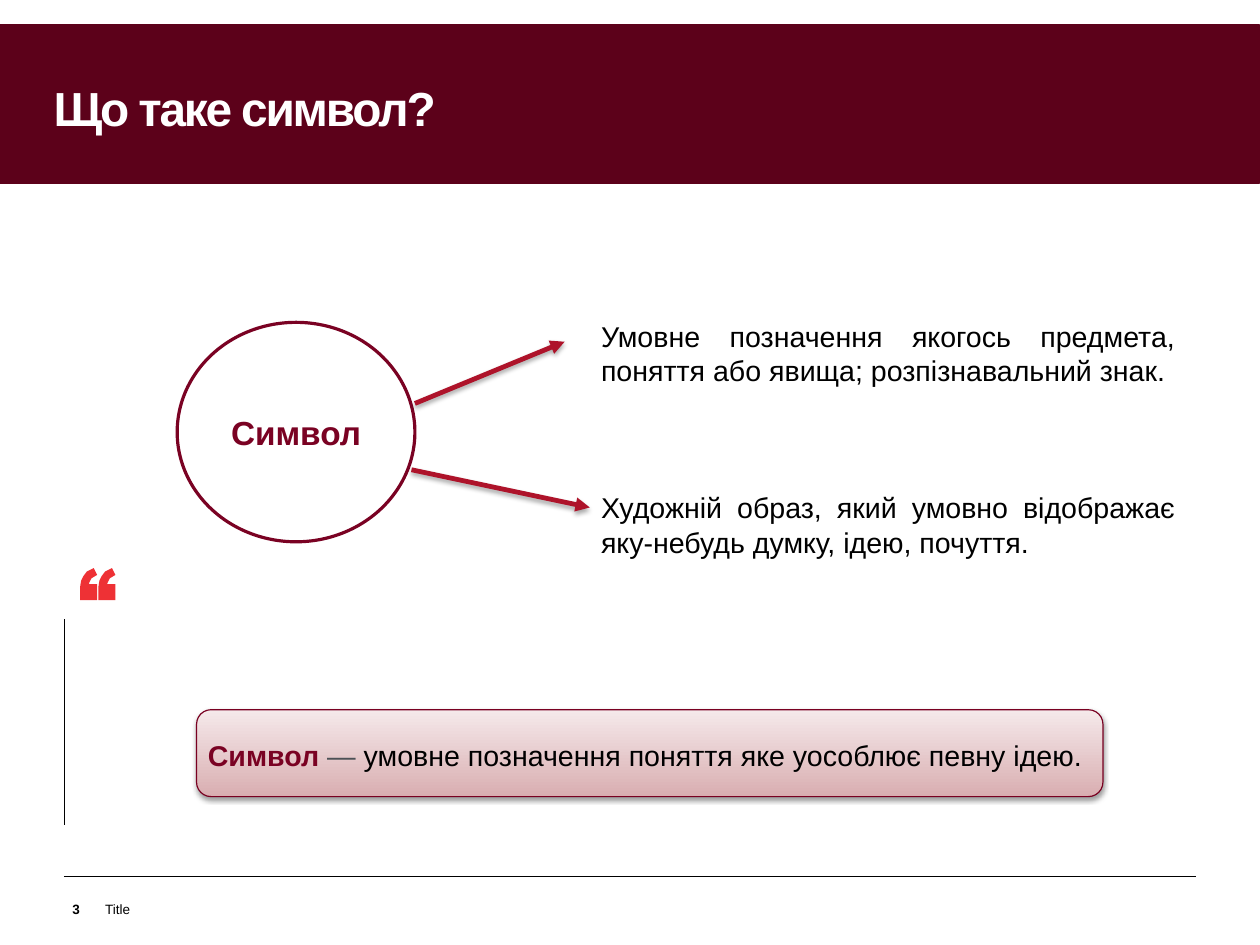
"""Build the slide that explains what a symbol is."""
from dataclasses import dataclass, field
from typing import Any

import pptx
import pptx.dml.color
import pptx.enum.shapes
import pptx.enum.text
import pptx.oxml
import pptx.oxml.ns
import pptx.util

Inches = pptx.util.Inches
Pt = pptx.util.Pt
ALIGN = pptx.enum.text.PP_ALIGN
SHAPE = pptx.enum.shapes.MSO_SHAPE

BLACK = "000000"
WHITE = "FFFFFF"
BAND = "5C011A"
WINE = "7A0223"
ARROW = "AE132A"
QUOTE = "EE3135"
GREY = "4D5156"


@dataclass
class Run:
    text: str
    size: float
    color: str = BLACK
    bold: bool = False
    tracking: float = 0


@dataclass
class TextBlock:
    box: tuple[float, float, float, float]
    paragraphs: list[list[Run]]
    margins: tuple[float, float] = (0.1, 0.05)
    wrap: bool = True
    paragraph_format: dict[str, Any] = field(default_factory=dict)
    gap: float = 0


@dataclass
class Line:
    start: tuple[float, float]
    end: tuple[float, float]
    width: float
    color: str = BLACK
    is_arrow: bool = False


@dataclass
class Panel:
    kind: Any
    box: tuple[float, float, float, float]
    fill: tuple[str, ...]
    line: str
    width: float
    label: tuple[Run, ...] = ()
    has_shadow: bool = False


def rgb(value: str) -> pptx.dml.color.RGBColor:
    """Turn a hex string into a colour."""
    return pptx.dml.color.RGBColor.from_string(value)


def set_values(target: Any, values: dict[str, Any]) -> None:
    """Set each named attribute on the target."""
    for name, value in values.items():
        setattr(target, name, value)


def set_effects(shape: Any, alpha: int = 0, distance: float = 0) -> None:
    """Give a shape a soft downward shadow, or none when alpha is zero."""
    namespace = pptx.oxml.ns.nsdecls("a")
    shadow = (
        f'<a:outerShdw blurRad="{Pt(3.1)}" dist="{Pt(distance)}" dir="5400000" rotWithShape="0">'
        f'<a:srgbClr val="{BLACK}"><a:alpha val="{alpha * 1000}"/></a:srgbClr></a:outerShdw>'
    )
    content = shadow if alpha else ""
    shape._element.spPr.append(
        pptx.oxml.parse_xml(f"<a:effectLst {namespace}>{content}</a:effectLst>"))


def write_runs(paragraph: Any, runs: Any) -> None:
    """Add formatted runs to a paragraph."""
    for item in runs:
        run = paragraph.add_run()
        run.text = item.text
        set_values(run.font, {"name": "Arial", "size": Pt(item.size), "bold": item.bold})
        run.font.color.rgb = rgb(item.color)
        if item.tracking:
            run.font._element.set("spc", str(round(item.tracking * 100)))


def draw_text(slide: Any, block: TextBlock) -> None:
    """Draw a text box."""
    frame = slide.shapes.add_textbox(*map(Inches, block.box)).text_frame
    side, edge = map(Inches, block.margins)
    set_values(frame, {
        "word_wrap": block.wrap,
        "margin_left": side, "margin_right": side,
        "margin_top": edge, "margin_bottom": edge,
    })
    for index, runs in enumerate(block.paragraphs):
        paragraph = frame.add_paragraph() if index else frame.paragraphs[0]
        set_values(paragraph, block.paragraph_format)
        if index:
            paragraph.space_before = Pt(block.gap)
        write_runs(paragraph, runs)


def draw_line(slide: Any, line: Line) -> None:
    """Draw a straight line, with a head and shadow if it is an arrow."""
    connector = slide.shapes.add_connector(
        pptx.enum.shapes.MSO_CONNECTOR.STRAIGHT, *map(Inches, line.start + line.end))
    connector.line.width = Pt(line.width)
    connector.line.color.rgb = rgb(line.color)
    if line.is_arrow:
        namespace = pptx.oxml.ns.nsdecls("a")
        head = pptx.oxml.parse_xml(f'<a:tailEnd {namespace} type="triangle"/>')
        connector.line._get_or_add_ln().append(head)
        set_effects(connector, 35, 1.8)
    else:
        set_effects(connector)


def draw_panel(slide: Any, panel: Panel) -> None:
    """Draw a filled and outlined shape with an optional label."""
    shape = slide.shapes.add_shape(panel.kind, *map(Inches, panel.box))
    if len(panel.fill) > 1:
        shape.fill.gradient()
        shape.fill.gradient_angle = 90
        for stop, color in zip(shape.fill.gradient_stops, panel.fill):
            stop.color.rgb = rgb(color)
    else:
        shape.fill.solid()
        shape.fill.fore_color.rgb = rgb(panel.fill[0])
    shape.line.color.rgb = rgb(panel.line)
    shape.line.width = Pt(panel.width)
    if panel.has_shadow:
        set_effects(shape, 38, 1.6)
    else:
        shape.shadow.inherit = False
    if panel.label:
        shape.text_frame.vertical_anchor = pptx.enum.text.MSO_ANCHOR.MIDDLE
        paragraph = shape.text_frame.paragraphs[0]
        paragraph.alignment = ALIGN.CENTER
        write_runs(paragraph, panel.label)


def draw_quote_mark(slide: Any) -> None:
    """Draw the opening quotation mark as two equal strokes, in hundredths of an inch."""
    stroke = [(82, 497), (76, 500), (73, 504), (71, 508), (70, 514), (70, 525),
              (85, 525), (85, 511), (78, 511), (78, 510), (80, 506), (85, 503)]
    builder = slide.shapes.build_freeform(*stroke[0], scale=Inches(0.01))
    builder.add_line_segments(stroke[1:], close=True)
    second = [(x + 16, y) for x, y in stroke]
    builder.move_to(*second[0])
    builder.add_line_segments(second[1:], close=True)
    mark = builder.convert_to_shape()
    mark.fill.solid()
    mark.fill.fore_color.rgb = rgb(QUOTE)
    mark.line.fill.background()
    mark.shadow.inherit = False


def main() -> None:
    """Draw the slide and save it."""
    presentation = pptx.Presentation()
    presentation.slide_width = Inches(28 / 2.54)
    presentation.slide_height = Inches(21 / 2.54)
    slide = presentation.slides.add_slide(presentation.slide_layouts[6])
    draw_quote_mark(slide)
    panels = [
        Panel(SHAPE.FLOWCHART_ALTERNATE_PROCESS, (1.72, 6.21, 7.93, 0.76),
              ("D9AEB1", "F5E9EA"), "790021", 0.75, has_shadow=True),
        Panel(SHAPE.RECTANGLE, (0, 0.22, 11.02, 1.38), (BAND,), BAND, 1),
        Panel(SHAPE.OVAL, (1.55, 2.82, 2.08, 1.92), (WHITE,), WINE, 2,
              (Run("Символ", 21, WINE, True),)),
    ]
    lines = [
        Line((0.56, 7.67), (10.46, 7.67), 0.75),
        Line((0.56, 5.42), (0.56, 7.22), 0.5),
        Line((3.63, 3.53), (4.94, 2.99), 3, ARROW, True),
        Line((3.6, 4.11), (5.16, 4.44), 3, ARROW, True),
    ]
    meanings = ["Умовне позначення якогось предмета, поняття або явища; розпізнавальний знак.",
                "Художній образ, який умовно відображає яку-небудь думку, ідею, почуття."]
    blocks = [
        TextBlock((0.55, 7.88, 0.15, 0.14), [[Run("3", 8.5, bold=True)]], (0, 0), False,
                  {"alignment": ALIGN.RIGHT}),
        TextBlock((0.92, 7.88, 3.34, 0.14), [[Run("Title", 8.5)]], (0, 0)),
        TextBlock((0.47, 0.75, 3.75, 0.33), [[Run("Що таке символ?", 30.1, WHITE, True, -1.4)]],
                  (0, 0), paragraph_format={"line_spacing": 0.9}),
        TextBlock((5.16, 2.74, 5.22, 2.83), [[Run(text, 18)] for text in meanings],
                  paragraph_format={"alignment": ALIGN.JUSTIFY}, gap=64.8),
        TextBlock((1.72, 6.41, 9.12, 0.4), [[
            Run("Символ ", 18, WINE, True), Run("— ", 18, GREY),
            Run("умовне позначення поняття яке уособлює певну ідею.", 18)]]),
    ]
    for draw, items in ((draw_panel, panels), (draw_line, lines), (draw_text, blocks)):
        for item in items:
            draw(slide, item)
    presentation.save("out.pptx")


if __name__ == "__main__":
    main()
